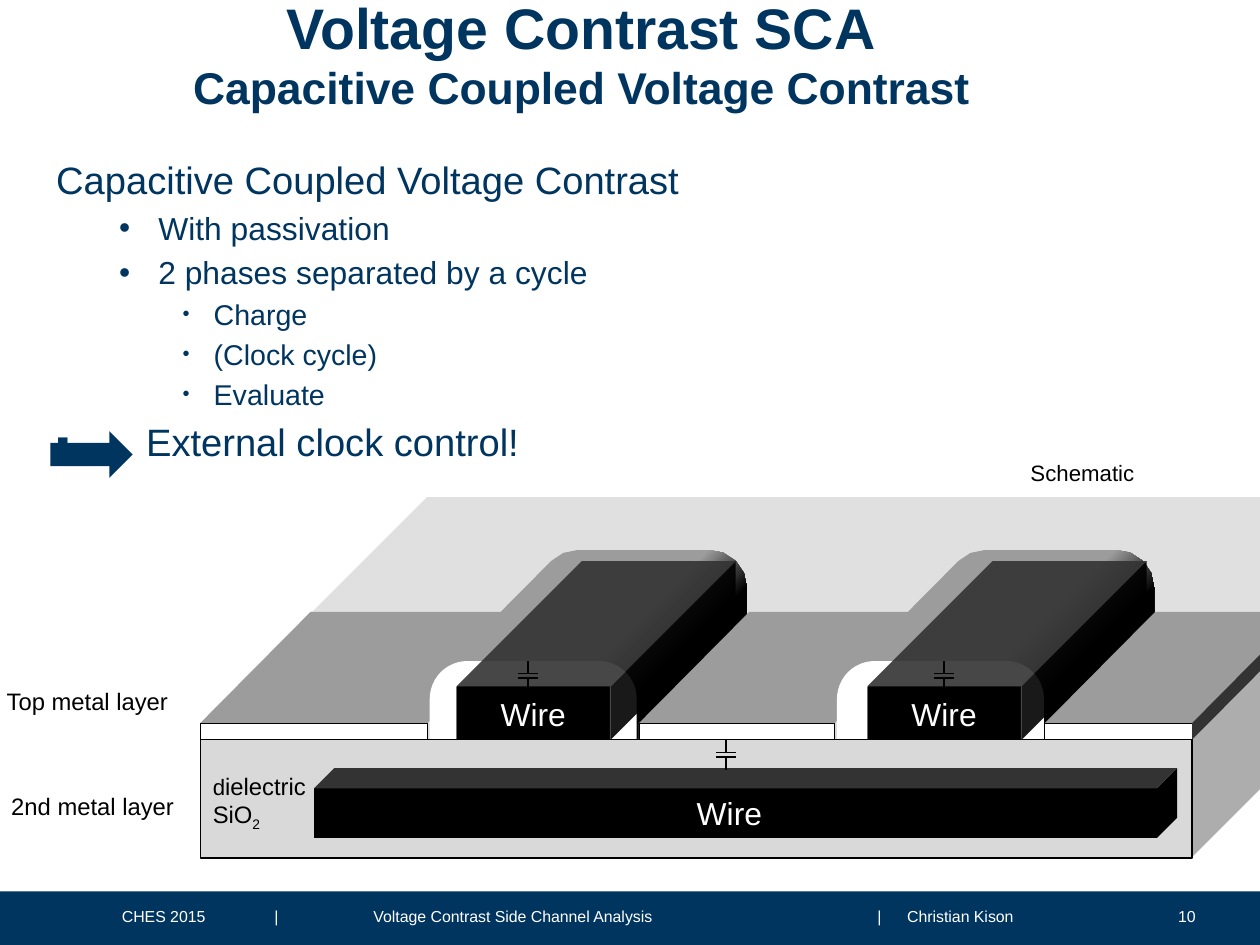
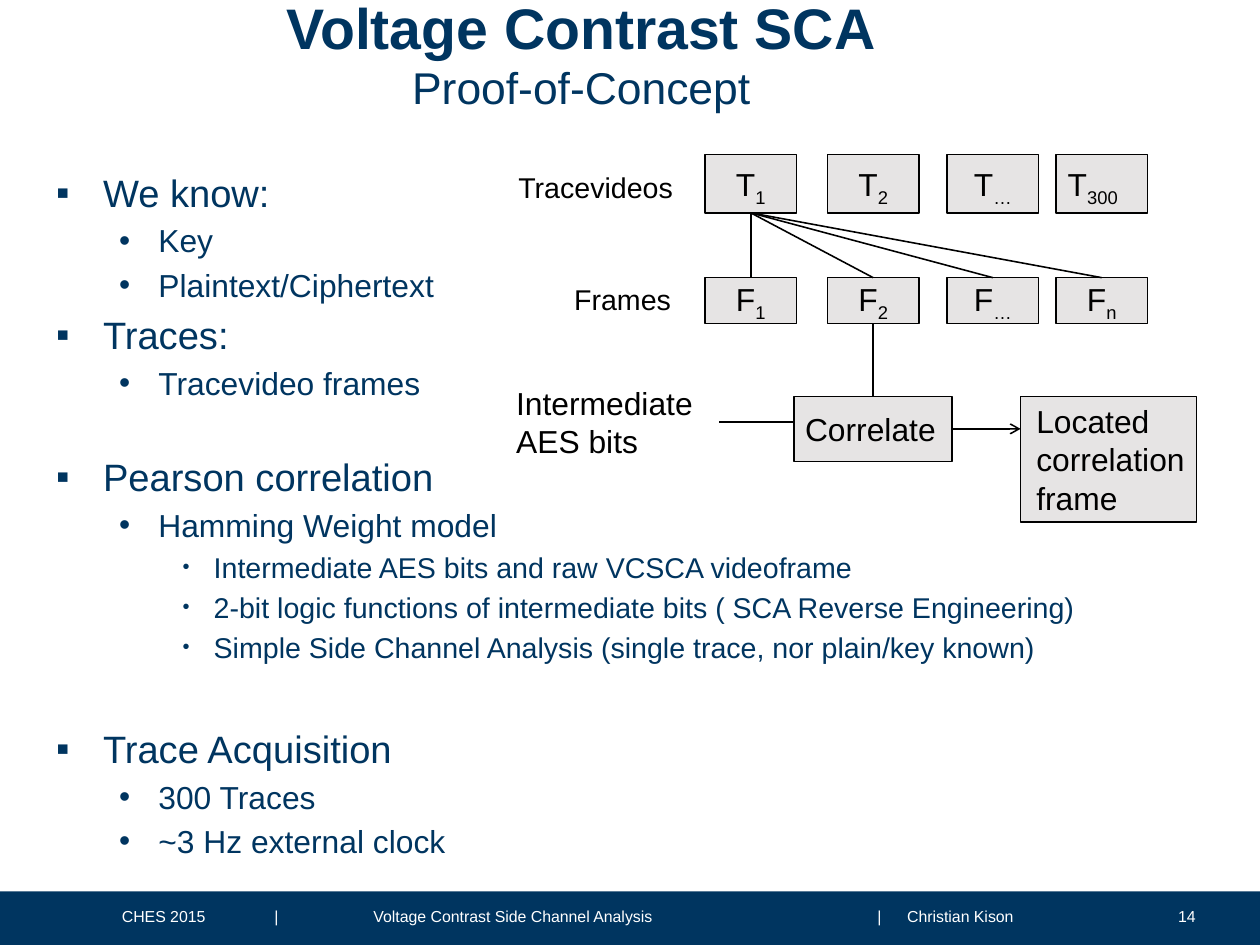
from dataclasses import dataclass
from math import cos, radians, sin

from lxml.etree import SubElement
from pptx import Presentation
from pptx.dml.color import RGBColor
from pptx.enum.shapes import MSO_CONNECTOR, MSO_SHAPE
from pptx.enum.text import MSO_ANCHOR, MSO_AUTO_SIZE, PP_ALIGN
from pptx.oxml.ns import qn
from pptx.util import Cm, Pt


@dataclass(frozen=True)
class Theme:
    font: str = "Arial"
    navy: str = "003560"
    white: str = "FFFFFF"
    black: str = "000000"
    oxide: str = "D9D9D9"
    slab: str = "9C9C9C"
    edge: str = "333333"
    box: str = "E6E4E4"
    title: int = 36
    subtitle: int = 28
    head: int = 24
    item: int = 20
    detail: int = 18
    label: int = 15
    small: int = 14
    footer: int = 10


T = Theme()


def text(tf, content, size=T.label, color=T.black, bold=False, align=PP_ALIGN.LEFT,
         before=0, left=0, hang=0, bullet=None, bullet_pct=100, initial=None):
    p = tf.paragraphs[0]
    if p.runs:
        p = tf.add_paragraph()
    pPr = p._p.get_or_add_pPr()
    pPr.set("marL", str(Cm(left)))
    pPr.set("indent", str(Cm(-hang)))
    if bullet:
        SubElement(pPr, qn("a:buSzPct"), val=str(bullet_pct * 1000))
        SubElement(pPr, qn("a:buFont"), typeface=T.font)
        SubElement(pPr, qn("a:buChar"), char=bullet)
    p.alignment = align
    p.space_before = Pt(before)
    base, *subscripts = content.split("_")
    parts = [(base, size, False)]
    if initial:
        parts = [(base[0], initial, False), (base[1:], size, False)]
    parts += [(part, size, True) for part in subscripts]
    for part, points, lowered in parts:
        r = p.add_run()
        r.text = part
        r.font.name = T.font
        r.font.size = Pt(points)
        r.font.bold = bold
        r.font.color.rgb = RGBColor.from_string(color)
        if lowered:
            r._r.get_or_add_rPr().set("baseline", "-25000")


def draw(s, geometry, place, fill=None, line=None, width=1, adjust=(), alpha=None,
         anchor=MSO_ANCHOR.MIDDLE):
    if geometry == "outline":
        points = [(Cm(x), Cm(y)) for x, y in place]
        builder = s.shapes.build_freeform(*points[0], scale=1.0)
        builder.add_line_segments(points[1:], close=True)
        sp = builder.convert_to_shape()
    elif geometry == "text":
        sp = s.shapes.add_textbox(*map(Cm, place))
    else:
        sp = s.shapes.add_shape(geometry, *map(Cm, place))
    if geometry != "text":
        sp.shadow.inherit = False
    for i, value in enumerate(adjust):
        sp.adjustments[i] = value
    if fill:
        sp.fill.solid()
        sp.fill.fore_color.rgb = RGBColor.from_string(fill)
        if alpha:
            color = sp.fill._xPr.find(qn("a:solidFill"))[0]
            SubElement(color, qn("a:alpha"), val=str(alpha * 1000))
    if line:
        sp.line.color.rgb = RGBColor.from_string(line)
        sp.line.width = Pt(width)
    else:
        sp.line.fill.background()
    tf = sp.text_frame
    tf.word_wrap = True
    tf.vertical_anchor = anchor
    tf.margin_left = tf.margin_right = tf.margin_top = tf.margin_bottom = 0
    return sp


LEVELS = {
    "plain": dict(size=T.head),
    "head": dict(size=T.head, left=1.04, hang=1.04, bullet="▪"),
    "arrow": dict(size=T.head, left=2, hang=2, bullet="▪"),
    "item": dict(size=T.item, left=2.27, hang=0.87, bullet="•"),
    "detail": dict(size=T.detail, left=3.5, hang=0.69, bullet="•", bullet_pct=70),
}

SLIDES = [
    ("Capacitive Coupled Voltage Contrast", True, "10", 3.48, [
        ("plain", "Capacitive Coupled Voltage Contrast", 0),
        ("item", "With passivation", 0),
        ("item", "2 phases separated by a cycle", 0),
        ("detail", "Charge", 0),
        ("detail", "(Clock cycle)", 0),
        ("detail", "Evaluate", 0),
        ("arrow", "External clock control!", 0),
    ]),
    ("Proof-of-Concept", False, "14", 3.76, [
        ("head", "We know:", 0),
        ("item", "Key", 0),
        ("item", "Plaintext/Ciphertext", 0),
        ("head", "Traces:", 0),
        ("item", "Tracevideo frames", 0),
        ("head", "Pearson correlation", 28),
        ("item", "Hamming Weight model", 0),
        ("detail", "Intermediate AES bits and raw VCSCA videoframe", 0),
        ("detail", "2-bit logic functions of intermediate bits ( SCA Reverse Engineering)", 0),
        ("detail", "Simple Side Channel Analysis (single trace, nor plain/key known)", 0),
        ("head", "Trace Acquisition", 34),
        ("item", "300 Traces", 0),
        ("item", "~3 Hz external clock", 0),
    ]),
]

FOOTER = [(2.71, "CHES 2015"), (6.1, "|"), (8.3, "Voltage Contrast Side Channel Analysis"),
          (19.5, "|"), (20.16, "Christian Kison")]

prs = Presentation()
prs.slide_width, prs.slide_height = Cm(28), Cm(21)
layout = prs.slide_layouts[5]
slides = []

for subtitle, bold, number, top, body in SLIDES:
    s = prs.slides.add_slide(layout)
    if not slides:
        shared = [draw(s, MSO_SHAPE.RECTANGLE, (0, 19.81, 28, 1.19), T.navy),
                  draw(s, MSO_SHAPE.RECTANGLE, (0, 0, 26.64, 2.67), T.white)]
        for x, content in FOOTER:
            shared.append(draw(s, "text", (x, 20.14, 6.5, 0.43)))
            text(shared[-1].text_frame, content, size=T.footer, color=T.white)
        for sp in shared:
            layout.shapes.element.append(sp.element)
    slides.append(s)
    title = s.shapes.title
    title.left, title.top, title.width, title.height = Cm(0.33), Cm(-0.18), Cm(25.17), Cm(2.7)
    tf = title.text_frame
    tf.auto_size = MSO_AUTO_SIZE.NONE
    tf.vertical_anchor = MSO_ANCHOR.TOP
    tf.margin_top = 0
    text(tf, "Voltage Contrast SCA", size=T.title, color=T.navy, bold=True, align=PP_ALIGN.CENTER)
    text(tf, subtitle, size=T.subtitle, color=T.navy, bold=bold, align=PP_ALIGN.CENTER)
    page = draw(s, "text", (25.55, 20.14, 1.02, 0.43))
    text(page.text_frame, number, size=T.footer, color=T.white, align=PP_ALIGN.RIGHT)
    tf = draw(s, "text", (1.25, top, 24, 19.4 - top), anchor=MSO_ANCHOR.TOP).text_frame
    for i, (level, content, extra) in enumerate(body):
        style = LEVELS[level]
        text(tf, content, color=T.navy, before=style["size"] * 0.2 + extra if i else 0, **style)

schematic, concept = slides
lines = []

draw(schematic, MSO_SHAPE.RIGHT_ARROW, (1.12, 9.58, 1.83, 1.04), T.navy)
draw(schematic, MSO_SHAPE.CUBE, (4.45, 11.05, 27.08, 8), T.oxide, adjust=(0.63,))

dx, dy = 2.45, -2.47
slab_top, base_top = 16.07, 16.44
arch_top, arch_width, radius = 14.69, 4.6, 0.85
for kind, x, width in [("slab", 4.45, 5.05), ("arch", 9.55, arch_width), ("slab", 14.2, 4.35),
                       ("arch", 18.6, arch_width), ("slab", 23.22, 3.27)]:
    right = x + width
    if kind == "slab":
        draw(schematic, "outline", [(x, slab_top), (x + dx, slab_top + dy),
                                    (right + dx, slab_top + dy), (right, slab_top)], T.slab)
        draw(schematic, MSO_SHAPE.RECTANGLE, (x, slab_top, width, base_top - slab_top),
             T.white, line=T.black, width=0.5)
    else:
        center = arch_top + radius
        turns = [(x + radius, a) for a in (225, 247, 270)]
        turns += [(right - radius, a) for a in (270, 292, 315, 337, 360)]
        back = [(cx + radius * cos(radians(a)) + dx, center + radius * sin(radians(a)) + dy)
                for cx, a in turns]
        hull = [(x, base_top), (x, center), (back[0][0] - dx, back[0][1] - dy), *back,
                (right + dx, base_top + dy), (right, base_top)]
        roof = draw(schematic, "outline", hull, T.slab)
        roof.fill.gradient()
        roof.fill.gradient_angle = 315
        for stop, position, color in zip(roof.fill.gradient_stops, (0.55, 0.7), (T.slab, T.black)):
            stop.position = position
            stop.color.rgb = RGBColor.from_string(color)
        draw(schematic, MSO_SHAPE.ROUND_2_SAME_RECTANGLE,
             (x, arch_top, width, base_top - arch_top), T.white, adjust=(0.48, 0))
draw(schematic, "outline", [(right, slab_top), (right + dx, slab_top + dy),
                            (right + dx, base_top + dy), (right, base_top)], T.edge)

draw(schematic, MSO_SHAPE.RECTANGLE, (4.45, base_top, 22.04, 2.63), T.oxide,
     line=T.black, width=0.75)
buried = draw(schematic, MSO_SHAPE.CUBE, (6.98, 17.07, 19.18, 1.55), T.black, adjust=(0.29,))
buried.text_frame.margin_right = Cm(0.27)
wires = [buried]
for x in (10.15, 19.28):
    draw(schematic, MSO_SHAPE.CUBE, (x, 12.47, 6.2, 3.97), T.black, adjust=(0.7,), alpha=90)
    wires.append(draw(schematic, MSO_SHAPE.RECTANGLE, (x, 15.27, 3.4, 1.17), T.black))
for wire in wires:
    text(wire.text_frame, "Wire", size=T.item, color=T.white, align=PP_ALIGN.CENTER)

for x, y in [(11.73, 14.69), (20.98, 14.69), (16.13, base_top)]:
    for x1, y1, x2, y2 in [(0, 0, 0, 0.28), (0, 0.38, 0, 0.66),
                           (-0.22, 0.28, 0.22, 0.28), (-0.22, 0.38, 0.22, 0.38)]:
        lines.append((schematic, (x + x1, y + y1, x + x2, y + y2), None, False))

boxes = {}
for y, height, drop, names in [(3.43, 1.3, 0.12, ("T_1", "T_2", "T_…", "T_300")),
                               (6.17, 1.02, 0.04, ("F_1", "F_2", "F_…", "F_n"))]:
    for x, name in zip((15.67, 18.39, 21.05, 23.47), names):
        boxes[name] = draw(concept, MSO_SHAPE.RECTANGLE, (x, y, 2.03, height), T.box, line=T.black)
        boxes[name].text_frame.margin_top = Cm(drop)
        text(boxes[name].text_frame, name, size=T.item, align=PP_ALIGN.CENTER)
boxes["T_300"].text_frame.margin_right = Cm(0.4)
correlate = draw(concept, MSO_SHAPE.RECTANGLE, (17.65, 8.81, 3.51, 1.45), T.box, line=T.black)
correlate.text_frame.margin_right = Cm(0.12)
text(correlate.text_frame, "Correlate", size=T.item, align=PP_ALIGN.CENTER)
located = draw(concept, MSO_SHAPE.RECTANGLE, (22.68, 8.81, 3.91, 2.79), T.box, line=T.black)
located.text_frame.margin_left = Cm(0.35)
text(located.text_frame, "Located correlation frame", size=T.item)

for name in ("F_1", "F_2", "F_…", "F_n"):
    lines.append((concept, (0, 0, 0, 0), (boxes["T_1"], boxes[name]), False))
lines.append((concept, (0, 0, 0, 0), (boxes["F_2"], correlate), False))
lines.append((concept, (15.98, 9.38, 17.65, 9.38), None, False))
lines.append((concept, (21.16, 9.53, 22.68, 9.53), None, True))

for s, x, y, width, height, size, rows in [
    (schematic, 0.15, 15.18, 4, 0.8, T.label, [("Top metal layer", None)]),
    (schematic, 0.25, 17.51, 4, 0.8, T.label, [("2nd metal layer", None)]),
    (schematic, 4.73, 17.17, 2.4, 1.3, T.label, [("dielectric", T.small), ("SiO_2", None)]),
    (schematic, 22.9, 10.1, 3.5, 0.8, T.small, [("Schematic", None)]),
    (concept, 11.52, 3.76, 4, 0.8, T.detail, [("Tracevideos", None)]),
    (concept, 12.76, 6.25, 2.5, 0.8, T.detail, [("Frames", None)]),
    (concept, 11.47, 8.53, 4.25, 1.7, T.item, [("Intermediate AES bits", None)]),
]:
    tf = draw(s, "text", (x, y, width, height)).text_frame
    for content, initial in rows:
        text(tf, content, size=size, initial=initial)

for s, ends, joined, arrow in lines:
    c = s.shapes.add_connector(MSO_CONNECTOR.STRAIGHT, *map(Cm, ends))
    if joined:
        c.begin_connect(joined[0], 2)
        c.end_connect(joined[1], 0)
    c.line.color.rgb = RGBColor.from_string(T.black)
    c.line.width = Pt(1)
    if arrow:
        SubElement(c.line._get_or_add_ln(), qn("a:tailEnd"), type="arrow")
    SubElement(c._element.spPr, qn("a:effectLst"))

prs.save("out.pptx")
